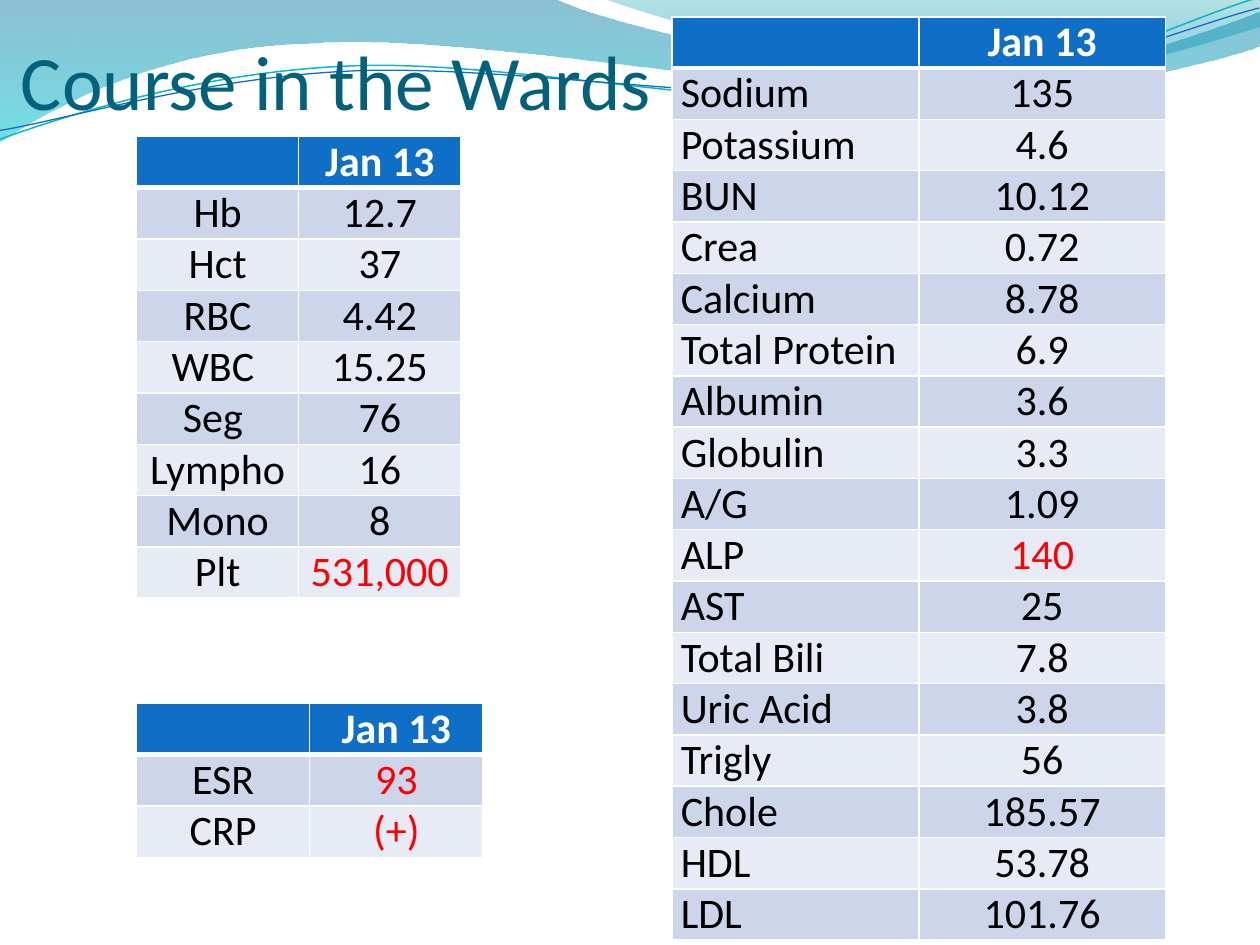
from dataclasses import dataclass
from itertools import islice

from lxml.etree import SubElement
from pptx import Presentation
from pptx.dml.color import RGBColor
from pptx.enum.text import MSO_ANCHOR, PP_ALIGN
from pptx.oxml.ns import qn
from pptx.util import Inches, Pt

COLUMNS, ROWS = 120, 90
WAVE_UNITS = 10
ROW_HEIGHT = 4.8
HEADER, BANDS = "0F6FC6", ("E7EBF5", "CCD5EA")
WHITE, BLACK, RED = "FFFFFF", "000000", "FF0000"

deck = Presentation()
deck.slide_width, deck.slide_height = Inches(10), Inches(7.5)


@dataclass
class Stop:
    """A gradient stop: place, colour and opacity in percent."""
    place: float
    colour: str
    opacity: int


@dataclass
class Wave:
    """A start point and segments of one (line) or three (curve) points, in tenths of the slide width."""
    start: tuple
    segments: list
    stops: tuple = ()
    line: str = ""
    weight: float = 0
    rotation: float = 0


@dataclass
class LabTable:
    """A table of laboratory results, placed in grid columns and rows."""
    column: float
    row: float
    width: float
    results: list
    abnormal: tuple = ()
    label_align: PP_ALIGN = PP_ALIGN.CENTER


WAVES = [
    Wave((0, 0), [
        [(4.4, -0.01)],
        [(4.76, 0.17), (6.64, 0.63), (7.58, 0.63)],
        [(8.53, 0.63), (9.58, 0.26), (10, 0.09)],
        [(10.01, 0.36)],
        [(9.83, 0.44), (8.7, 0.76), (7.46, 0.75)],
        [(6.22, 0.75), (3.82, 0.28), (2.57, 0.34)],
        [(1.29, 0.36), (0.46, 0.83), (-0.01, 1.13)],
        [(0, 0)],
    ], stops=(Stop(0, "0074A1", 45), Stop(1, "00C6CF", 55))),
    Wave((4.79, -0.01), [
        [(5.09, 0.11), (6.82, 0.62), (7.69, 0.65)],
        [(8.56, 0.69), (9.61, 0.32), (10, 0.21)],
        [(10, 0)],
        [(4.79, -0.01)],
    ], stops=(Stop(0, "00A1A9", 30), Stop(0.8, "008BBF", 45))),
    Wave((-0.02, 0.87), [
        [(0.47, 0.72), (1.58, 0.41), (2.78, 0.42)],
        [(3.96, 0.42), (5.91, 0.93), (7.12, 0.9)],
        [(8.32, 0.87), (9.4, 0.36), (10, 0.22)],
    ], line="0AB8BF", weight=0.85, rotation=357.3),
    Wave((-0.02, 0.8), [
        [(0.46, 0.75), (1.64, 0.45), (2.83, 0.46)],
        [(4.03, 0.47), (5.96, 0.88), (7.16, 0.85)],
        [(8.35, 0.83), (9.42, 0.42), (10.01, 0.3)],
    ], line="0F6FC6", weight=0.75, rotation=357.3),
]

TABLES = [
    LabTable(13, 13, 30.9, [
        ("Hb", "12.7"), ("Hct", "37"), ("RBC", "4.42"), ("WBC ", "15.25"),
        ("Seg ", "76"), ("Lympho", "16"), ("Mono", "8"), ("Plt", "531,000"),
    ], abnormal=("Plt",)),
    LabTable(64, 1.6, 47, [
        ("Sodium", "135"), ("Potassium", "4.6"), ("BUN", "10.12"), ("Crea", "0.72"),
        ("Calcium", "8.78"), ("Total Protein", "6.9"), ("Albumin", "3.6"),
        ("Globulin", "3.3"), ("A/G", "1.09"), ("ALP", "140"), ("AST", "25"),
        ("Total Bili", "7.8"), ("Uric Acid", "3.8"), ("Trigly", "56"),
        ("Chole", "185.57"), ("HDL", "53.78"), ("LDL", "101.76"),
    ], abnormal=("ALP",), label_align=PP_ALIGN.LEFT),
    LabTable(13, 67, 33, [("ESR", "93"), ("CRP", "(+)")], abnormal=("ESR", "CRP")),
]


def across(columns: float) -> int:
    """Turn grid columns into a length."""
    return round(deck.slide_width * columns / COLUMNS)


def down(rows: float) -> int:
    """Turn grid rows into a length."""
    return round(deck.slide_height * rows / ROWS)


def colour(code: str) -> RGBColor:
    """Turn a hex string into a colour."""
    return RGBColor.from_string(code)


def write(frame, text: str, *, size: float, ink: str, bold: bool = False,
          align: PP_ALIGN = PP_ALIGN.LEFT) -> None:
    """Write one formatted paragraph into a text frame."""
    para = frame.paragraphs[0]
    para.alignment = align
    span = para.add_run()
    span.text = text
    span.font.name, span.font.size, span.font.bold = "Calibri", Pt(size), bold
    span.font.color.rgb = colour(ink)


def outline(page, wave: Wave):
    """Build the outline of a wave, joining each three points into a Bezier curve."""
    unit = deck.slide_width / WAVE_UNITS
    points = [wave.start, *(point for segment in wave.segments for point in segment)]
    first, *others = [(round(x * unit), round(y * unit)) for x, y in points]
    builder = page.shapes.build_freeform(*first)
    builder.add_line_segments(others, close=bool(wave.stops))
    shape = builder.convert_to_shape()
    contour = next(shape.element.iter(qn("a:path")))
    edges = iter(contour.findall(qn("a:lnTo")))
    for segment in wave.segments:
        edge, *controls = islice(edges, len(segment))
        if controls:
            edge.tag = qn("a:cubicBezTo")
        for control in controls:
            edge.append(control[0])
            contour.remove(control)
    return shape


def draw_wave(page, wave: Wave) -> None:
    """Draw a wave as a gradient area or as a thin line."""
    shape = outline(page, wave)
    shape.rotation = wave.rotation
    shape.shadow.inherit = False
    if not wave.stops:
        shape.fill.background()
        shape.line.color.rgb = colour(wave.line)
        shape.line.width = Pt(wave.weight)
        return
    shape.line.fill.background()
    shape.fill.gradient()
    shape.fill.gradient_angle = 270
    for target, stop in zip(shape.fill.gradient_stops, wave.stops):
        target.position = stop.place
        target.color.rgb = colour(stop.colour)
    for code, stop in zip(shape.element.spPr.iter(qn("a:srgbClr")), wave.stops):
        SubElement(code, qn("a:alpha"), val=str(stop.opacity * 1000))


def style_cell(cell, fill: str, top: float, bottom: float) -> None:
    """Set the margins, white borders and fill of a cell."""
    cell.margin_left = cell.margin_right = Inches(0.07)
    cell.margin_top = cell.margin_bottom = 0
    properties = cell._tc.get_or_add_tcPr()
    for side, weight in (("L", 1), ("R", 1), ("T", top), ("B", bottom)):
        border = SubElement(properties, qn(f"a:ln{side}"), w=str(Pt(weight)))
        solid = SubElement(border, qn("a:solidFill"))
        SubElement(solid, qn("a:srgbClr"), val=WHITE)
    cell.fill.solid()
    cell.fill.fore_color.rgb = colour(fill)


def draw_table(page, lab: LabTable) -> None:
    """Draw a table with a header and banded result rows."""
    lines = [("", "Jan 13"), *lab.results]
    table = page.shapes.add_table(len(lines), 2, across(lab.column), down(lab.row),
                                  across(lab.width), down(ROW_HEIGHT * len(lines))).table
    for index, line in enumerate(lines):
        header = index == 0
        for column, text in enumerate(line):
            cell = table.cell(index, column)
            style_cell(cell, HEADER if header else BANDS[index % 2],
                       top=3 if index == 1 else 1, bottom=3 if header else 1)
            flagged = column == 1 and line[0] in lab.abnormal
            if text:
                write(cell.text_frame, text, size=24, bold=header,
                      ink=WHITE if header else RED if flagged else BLACK,
                      align=PP_ALIGN.CENTER if header or column else lab.label_align)


def place_title(page, text: str) -> None:
    """Move the title placeholder in front of the waves and fill it."""
    title = page.shapes.title
    page.shapes.element.append(title.element)
    title.left, title.top, title.width, title.height = across(2), down(-3), across(108), down(15)
    frame = title.text_frame
    frame.word_wrap = True
    frame.vertical_anchor = MSO_ANCHOR.BOTTOM
    frame.margin_left = frame.margin_right = frame.margin_bottom = 0
    frame.margin_top = Inches(0.05)
    write(frame, text, size=44, ink="04617B")


def main() -> None:
    """Build the slide and save it."""
    page = deck.slides.add_slide(deck.slide_layouts.get_by_name("Title Only"))
    for wave in WAVES:
        draw_wave(page, wave)
    place_title(page, "Course in the Wards")
    for lab in TABLES:
        draw_table(page, lab)
    deck.save("out.pptx")


if __name__ == "__main__":
    main()
